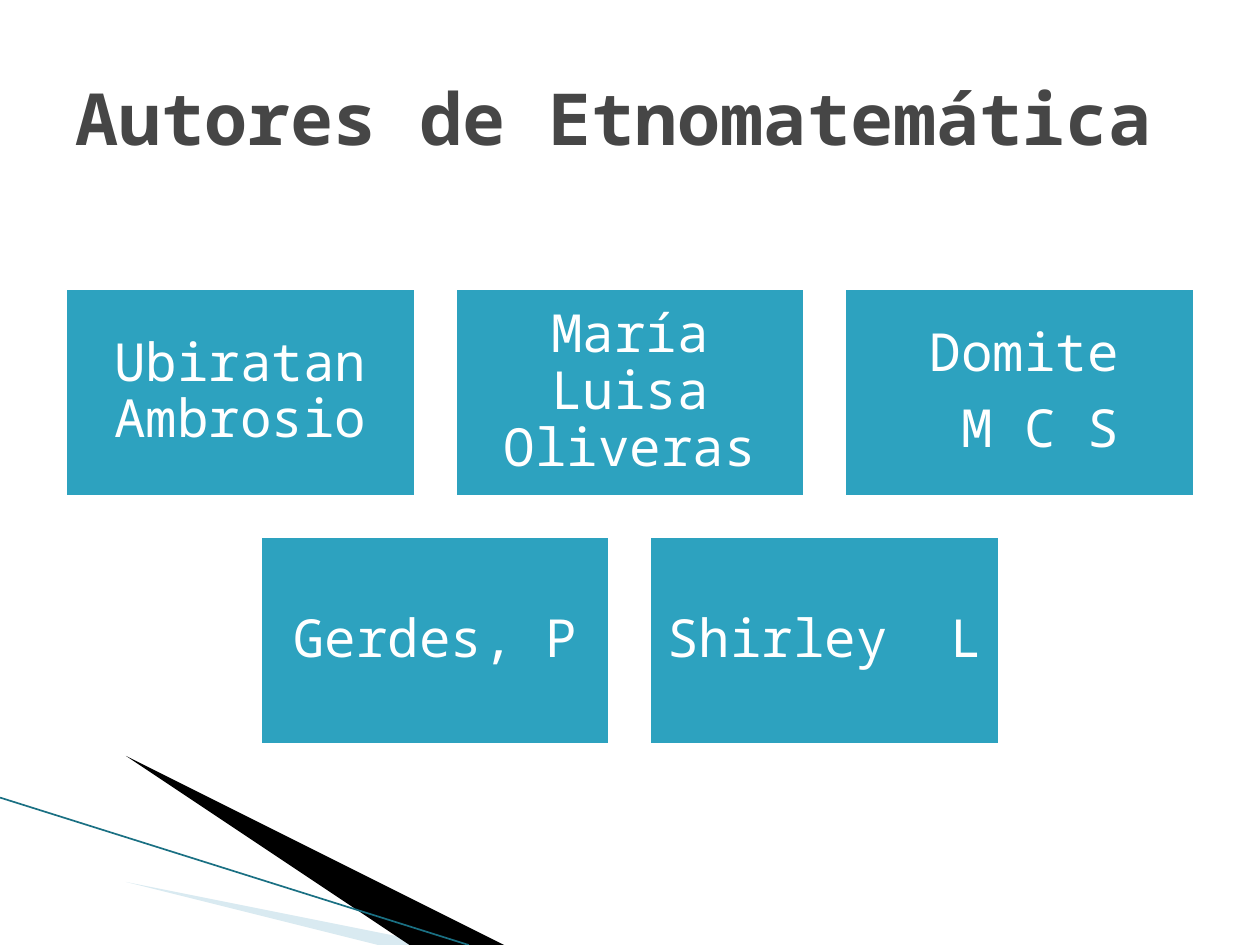
from pptx import Presentation
from pptx.dml.color import RGBColor
from pptx.enum.shapes import MSO_CONNECTOR as Connector, MSO_SHAPE as Shape
from pptx.enum.text import MSO_ANCHOR as Anchor, PP_ALIGN as Align
from pptx.oxml.ns import qn
from pptx.util import Emu, Inches, Pt
from lxml.etree import SubElement

WIDTH, HEIGHT = 10, 7.5
FONT = "Noto Sans Mono"
COLORS = {
    "card": "2DA2BF",
    "white": "FFFFFF",
    "title": "464646",
    "pale": "A0CBDC",
    "black": "000000",
    "edge": "1A7083",
}
AUTHOR_ROWS = [
    [["Ubiratan Ambrosio"], ["María Luisa Oliveras"], ["Domite", "M C S"]],
    [["Gerdes, P"], ["Shirley  L"]],
]


def color(name):
    return RGBColor.from_string(COLORS[name])


def style(paragraph, size, tint, bold=False):
    for run in paragraph.runs:
        run.font.name = FONT
        run.font.size = Pt(size)
        run.font.bold = bold
        run.font.color.rgb = color(tint)


def add_wedge(slide, box, points, tint, alpha=None):
    left, top, width, height = box
    corners = [(left + x * width, top + y * height) for x, y in points]
    builder = slide.shapes.build_freeform(*corners[0], scale=Inches(1))
    builder.add_line_segments(corners[1:], close=True)
    wedge = builder.convert_to_shape()
    wedge.shadow.inherit = False
    wedge.fill.solid()
    wedge.fill.fore_color.rgb = color(tint)
    wedge.line.fill.background()
    if alpha:
        rgb = wedge.fill._xPr.find(qn("a:solidFill")).find(qn("a:srgbClr"))
        SubElement(rgb, qn("a:alpha"), val=str(alpha * 1000))


def add_corner(slide, box):
    left, top, width, height = box
    add_wedge(slide, box, [(0.09, 0.15), (1, 1), (0.77, 1)], "pale", 40)
    add_wedge(slide, box, [(0.09, 0.14), (0.77, 1), (0.62, 1)], "black")
    edge = slide.shapes.add_connector(
        Connector.STRAIGHT, Inches(left), Inches(top),
        Inches(left + 0.62 * width), Inches(top + height))
    edge.line.color.rgb = color("edge")
    edge.line.width = Pt(0.95)
    SubElement(edge._element.spPr, qn("a:effectLst"))


def add_title(slide, box, wording):
    title = slide.shapes.add_textbox(*map(Inches, box)).text_frame
    title.word_wrap = True
    title.vertical_anchor = Anchor.MIDDLE
    title.text = wording
    style(title.paragraphs[0], 41, "title", True)


def add_card(slide, box, lines):
    card = slide.shapes.add_shape(Shape.RECTANGLE, *map(Inches, box))
    card.shadow.inherit = False
    card.fill.solid()
    card.fill.fore_color.rgb = color("card")
    card.line.color.rgb = color("white")
    card.line.width = Pt(4.33)
    label = card.text_frame
    label.word_wrap = True
    label.vertical_anchor = Anchor.MIDDLE
    label.margin_left = label.margin_right = Inches(0.12)
    label.margin_top = label.margin_bottom = Inches(0.12)
    label.text = "\n".join(lines)
    for paragraph in label.paragraphs:
        paragraph.alignment = Align.RIGHT if len(lines) > 1 else Align.CENTER
        paragraph.line_spacing = 0.9
        paragraph.space_after = Pt(10.5)
        style(paragraph, 30, "white")
    if len(lines) > 1:
        first = label.paragraphs[0]._p.get_or_add_pPr()
        first.set("marR", str(Emu(Inches(0.5))))


def add_authors(slide, box, rows, gap):
    left, top, width, height = box
    columns = max(map(len, rows))
    card_width = (width - gap * (columns - 1)) / columns
    card_height = (height - gap * (len(rows) - 1)) / len(rows)
    for row, authors in enumerate(rows):
        indent = (columns - len(authors)) * (card_width + gap) / 2
        for column, lines in enumerate(authors):
            place = (left + indent + column * (card_width + gap),
                     top + row * (card_height + gap), card_width, card_height)
            add_card(slide, place, lines)


def main():
    deck = Presentation()
    deck.slide_width, deck.slide_height = Inches(WIDTH), Inches(HEIGHT)
    slide = deck.slides.add_slide(deck.slide_layouts[6])
    margin = 0.05 * WIDTH
    content = 0.9 * WIDTH
    add_corner(slide, (0, 6.33, 0.6 * WIDTH, HEIGHT - 6.33))
    add_authors(slide, (margin, 2.27, content, 3.66), AUTHOR_ROWS, 0.28)
    add_title(slide, (margin, 0.3, content, HEIGHT / 6), "Autores de Etnomatemática")
    deck.save("out.pptx")


if __name__ == "__main__":
    main()
